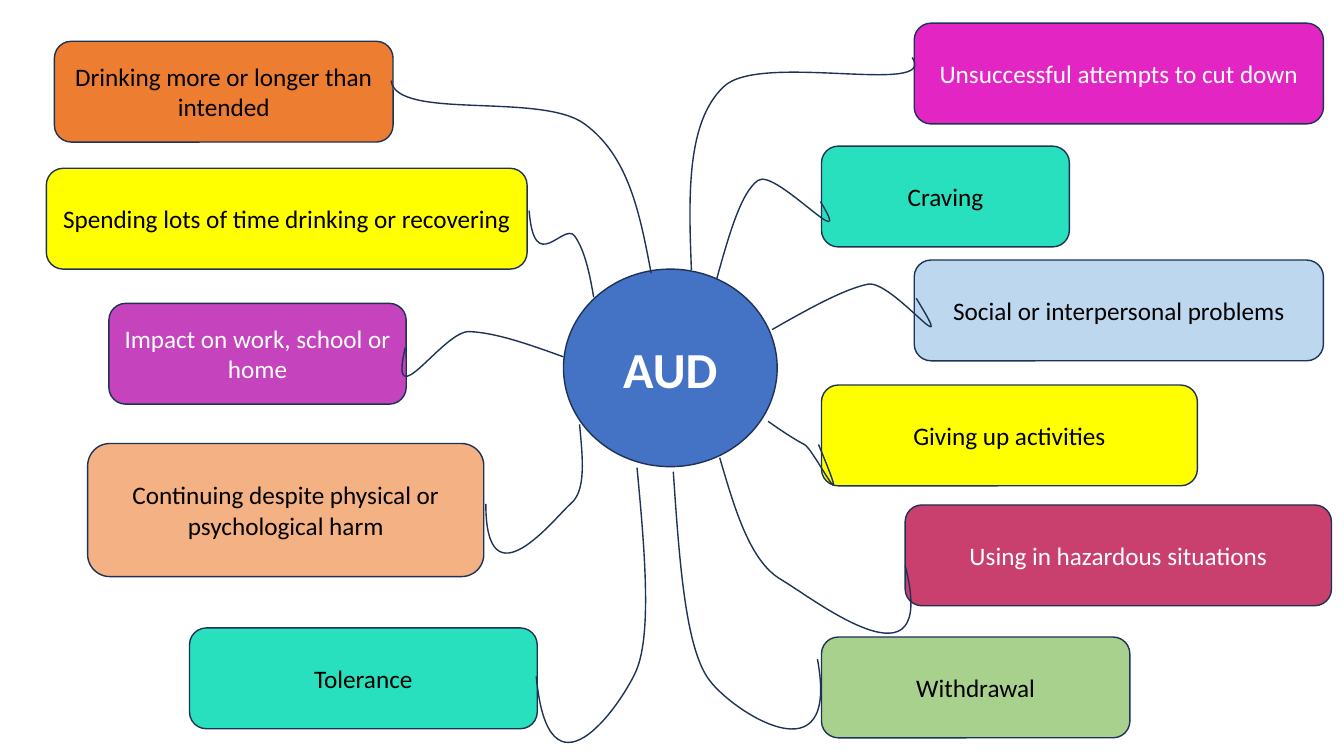
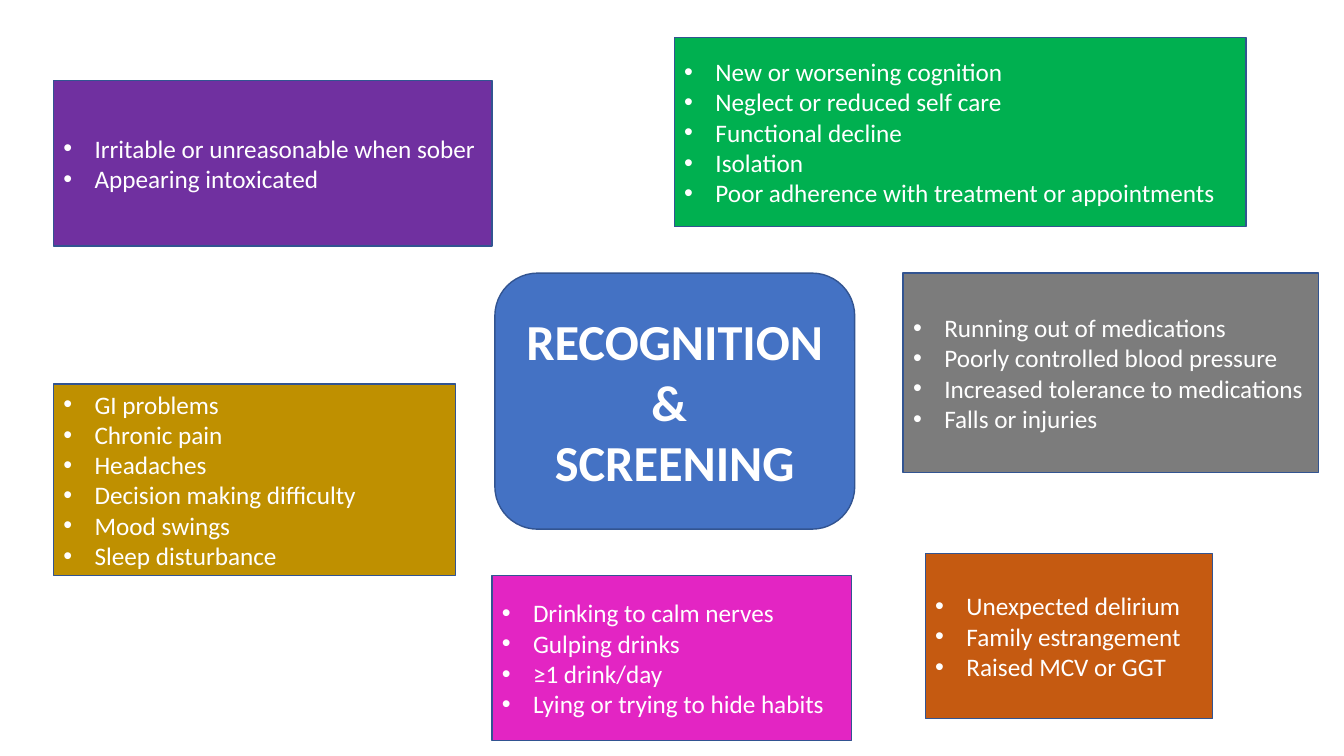
from lxml.etree import SubElement
from pptx import Presentation
from pptx.dml.color import RGBColor
from pptx.enum.shapes import MSO_SHAPE as Preset
from pptx.enum.text import MSO_ANCHOR as Anchor, PP_ALIGN as Align
from pptx.oxml.ns import qn
from pptx.util import Inches, Pt

FONT = "Calibri"
BODY_SIZE = 18
HUB_SIZE = 36
EXTENT_STEPS = 100
BULLET_INDENT = Inches(0.31)

WHITE = RGBColor(0xFF, 0xFF, 0xFF)
BLACK = RGBColor(0x00, 0x00, 0x00)
NAVY = RGBColor(0x1E, 0x32, 0x56)
STEEL = RGBColor(0x32, 0x54, 0x91)
BLUE = RGBColor(0x44, 0x72, 0xC4)
PALE_BLUE = RGBColor(0xBD, 0xD7, 0xEE)
YELLOW = RGBColor(0xFF, 0xFF, 0x00)
ROSE = RGBColor(0xC9, 0x3F, 0x6D)
SAGE = RGBColor(0xA9, 0xD1, 0x8E)
TURQUOISE = RGBColor(0x28, 0xE0, 0xBD)
ORANGE = RGBColor(0xED, 0x7D, 0x31)
PEACH = RGBColor(0xF4, 0xB1, 0x83)
ORCHID = RGBColor(0xC5, 0x43, 0xBC)
MAGENTA = RGBColor(0xE3, 0x25, 0xC3)
GOLD = RGBColor(0xBF, 0x90, 0x00)
PURPLE = RGBColor(0x70, 0x30, 0xA0)
RUST = RGBColor(0xC5, 0x5A, 0x11)
GREY = RGBColor(0x7C, 0x7C, 0x7C)
GREEN = RGBColor(0x00, 0xB0, 0x50)

CRITERIA = [
    ("Giving up activities", (8.15, 3.82, 3.73, 1), YELLOW, BLACK),
    ("Using in hazardous situations", (8.98, 5.01, 4.23, 1), ROSE, WHITE),
    ("Withdrawal", (8.15, 6.32, 3.06, 1), SAGE, BLACK),
    ("Social or interpersonal problems", (9.07, 2.58, 4.06, 1), PALE_BLUE, BLACK),
    ("Craving", (8.15, 1.45, 2.46, 1), TURQUOISE, BLACK),
    ("Drinking more or longer than intended", (0.54, 0.41, 3.36, 1), ORANGE, BLACK),
    ("Continuing despite physical or psychological harm",
     (0.87, 4.4, 3.93, 1.32), PEACH, BLACK),
    ("Impact on work, school or home", (1.08, 3.01, 2.95, 1), ORCHID, WHITE),
    ("Tolerance", (1.88, 6.23, 3.45, 1), TURQUOISE, BLACK),
    ("Spending lots of time drinking or recovering",
     (0.46, 1.67, 4.77, 1), YELLOW, BLACK),
    ("Unsuccessful attempts to cut down", (9.07, 0.23, 4.06, 1), MAGENTA, WHITE),
]

BRANCHES = [
    [(6.46, 2.71), (6.35, 2.13), (6.24, 1.55), (5.8, 1.23),
     (5.37, 0.91), (3.93, 1.2), (3.88, 0.8)],
    [(5.89, 2.95), (5.85, 2.71), (5.8, 2.48), (5.7, 2.34),
     (5.59, 2.2), (5.3, 2.75), (5.25, 2.09)],
    [(5.59, 3.54), (5.26, 3.42), (4.92, 3.3), (4.66, 3.29),
     (4.4, 3.27), (3.85, 4.18), (4.02, 3.45)],
    [(5.75, 4.21), (5.78, 4.54), (5.82, 4.87), (5.66, 5),
     (5.51, 5.13), (4.82, 6.03), (4.82, 5)],
    [(6.32, 4.64), (6.4, 5.49), (6.47, 6.33), (6.3, 6.68),
     (6.14, 7.02), (5.44, 8.02), (5.32, 6.71)],
    [(6.86, 2.68), (6.83, 1.94), (6.81, 1.21), (7.18, 0.86),
     (7.54, 0.51), (9.31, 0.96), (9.05, 0.57)],
    [(7.11, 2.77), (7.23, 2.34), (7.35, 1.91), (7.52, 1.79),
     (7.69, 1.66), (8.5, 2.59), (8.14, 2)],
    [(7.66, 3.27), (8.01, 3.07), (8.37, 2.87), (8.61, 2.82),
     (8.85, 2.77), (9.54, 3.69), (9.09, 2.96)],
    [(7.62, 4.18), (7.76, 4.28), (7.9, 4.37), (7.98, 4.41),
     (8.07, 4.45), (8.49, 5.3), (8.12, 4.41)],
    [(7.14, 4.54), (7.29, 5.05), (7.44, 5.57), (7.75, 5.75),
     (8.06, 5.93), (9.32, 6.93), (8.98, 5.61)],
    [(6.68, 4.68), (6.74, 5.56), (6.8, 6.44), (7.04, 6.75),
     (7.27, 7.06), (8.34, 7.76), (8.11, 6.54)],
]

SIGNS = [
    ((0.53, 3.81, 3.99, 1.9), GOLD,
     ["GI problems", "Chronic pain", "Headaches", "Decision making difficulty",
      "Mood swings", "Sleep disturbance"]),
    ((0.53, 0.8, 4.35, 1.64), PURPLE,
     ["Irritable or unreasonable when sober", "Appearing intoxicated"]),
    ((4.88, 5.71, 3.57, 1.64), MAGENTA,
     ["Drinking to calm nerves", "Gulping drinks", "≥1 drink/day",
      "Lying or trying to hide habits"]),
    ((9.18, 5.49, 2.85, 1.64), RUST,
     ["Unexpected delirium", "Family estrangement", "Raised MCV or GGT"]),
    ((8.96, 2.71, 4.12, 1.98), GREY,
     ["Running out of medications", "Poorly controlled blood pressure",
      "Increased tolerance to medications", "Falls or injuries"]),
    ((6.69, 0.37, 5.67, 1.88), GREEN,
     ["New or worsening cognition", "Neglect or reduced self care",
      "Functional decline", "Isolation",
      "Poor adherence with treatment or appointments"]),
]


def set_outline(shape, colour):
    shape.shadow.inherit = False
    shape.line.color.rgb = colour
    shape.line.width = Pt(1)


def add_bullet(para):
    properties = para._p.get_or_add_pPr()
    properties.set("marL", str(BULLET_INDENT))
    properties.set("indent", str(-BULLET_INDENT))
    SubElement(properties, qn("a:buFont"), typeface="Arial")
    SubElement(properties, qn("a:buChar"), char="•")


def add_box(page, preset, place, fill, outline, lines, colour=WHITE,
            size=BODY_SIZE, bold=False, bulleted=False):
    box = page.shapes.add_shape(preset, *map(Inches, place))
    set_outline(box, outline)
    box.fill.solid()
    box.fill.fore_color.rgb = fill
    frame = box.text_frame
    frame.word_wrap = True
    frame.vertical_anchor = Anchor.MIDDLE
    frame.text = "\n".join(lines)
    for para in frame.paragraphs:
        para.alignment = Align.LEFT if bulleted else Align.CENTER
        if bulleted:
            add_bullet(para)
        for span in para.runs:
            span.font.name = FONT
            span.font.size = Pt(size)
            span.font.bold = bold
            span.font.color.rgb = colour


def bezier_point(controls, t):
    weights = ((1 - t) ** 3, 3 * t * (1 - t) ** 2, 3 * t ** 2 * (1 - t), t ** 3)
    return tuple(Inches(sum(weight * value for weight, value in zip(weights, axis)))
                 for axis in zip(*controls))


def curve_extent(controls):
    points = [bezier_point(controls[first:first + 4], step / EXTENT_STEPS)
              for first in range(0, len(controls) - 1, 3)
              for step in range(EXTENT_STEPS + 1)]
    columns, rows = zip(*points)
    return (min(columns), min(rows),
            max(columns) - min(columns), max(rows) - min(rows))


def add_branch(page, controls):
    points = [(Inches(x), Inches(y)) for x, y in controls]
    builder = page.shapes.build_freeform(*points[0])
    builder.add_line_segments(points[3::3], close=False)
    branch = builder.convert_to_shape()
    left, top, width, height = curve_extent(controls)
    branch.left, branch.top, branch.width, branch.height = left, top, width, height
    curve = next(branch._element.iter(qn("a:path")))
    curve.set("w", str(width))
    curve.set("h", str(height))
    for segment in list(curve):
        curve.remove(segment)
    moves = [("a:moveTo", points[:1])]
    moves += [("a:cubicBezTo", points[first:first + 3])
              for first in range(1, len(points), 3)]
    for tag, corners in moves:
        segment = SubElement(curve, qn(tag))
        for x, y in corners:
            SubElement(segment, qn("a:pt"), x=str(x - left), y=str(y - top))
    branch.fill.background()
    set_outline(branch, NAVY)


def build_criteria_map(page):
    for label, place, fill, colour in CRITERIA:
        add_box(page, Preset.ROUNDED_RECTANGLE, place, fill, NAVY, [label], colour)
    add_box(page, Preset.FLOWCHART_CONNECTOR, (5.59, 2.67, 2.12, 1.96), BLUE, NAVY,
            ["AUD"], size=HUB_SIZE, bold=True)
    for controls in BRANCHES:
        add_branch(page, controls)


def build_screening_map(page):
    for place, fill, lines in SIGNS:
        add_box(page, Preset.RECTANGLE, place, fill, STEEL, lines, bulleted=True)
    add_box(page, Preset.ROUNDED_RECTANGLE, (4.91, 2.71, 3.57, 2.54), BLUE, STEEL,
            ["RECOGNITION & ", "SCREENING"], size=HUB_SIZE, bold=True)


def main():
    deck = Presentation()
    deck.slide_width = Inches(40 / 3)
    deck.slide_height = Inches(7.5)
    for build in (build_criteria_map, build_screening_map):
        build(deck.slides.add_slide(deck.slide_layouts[6]))
    deck.save("out.pptx")


if __name__ == "__main__":
    main()
